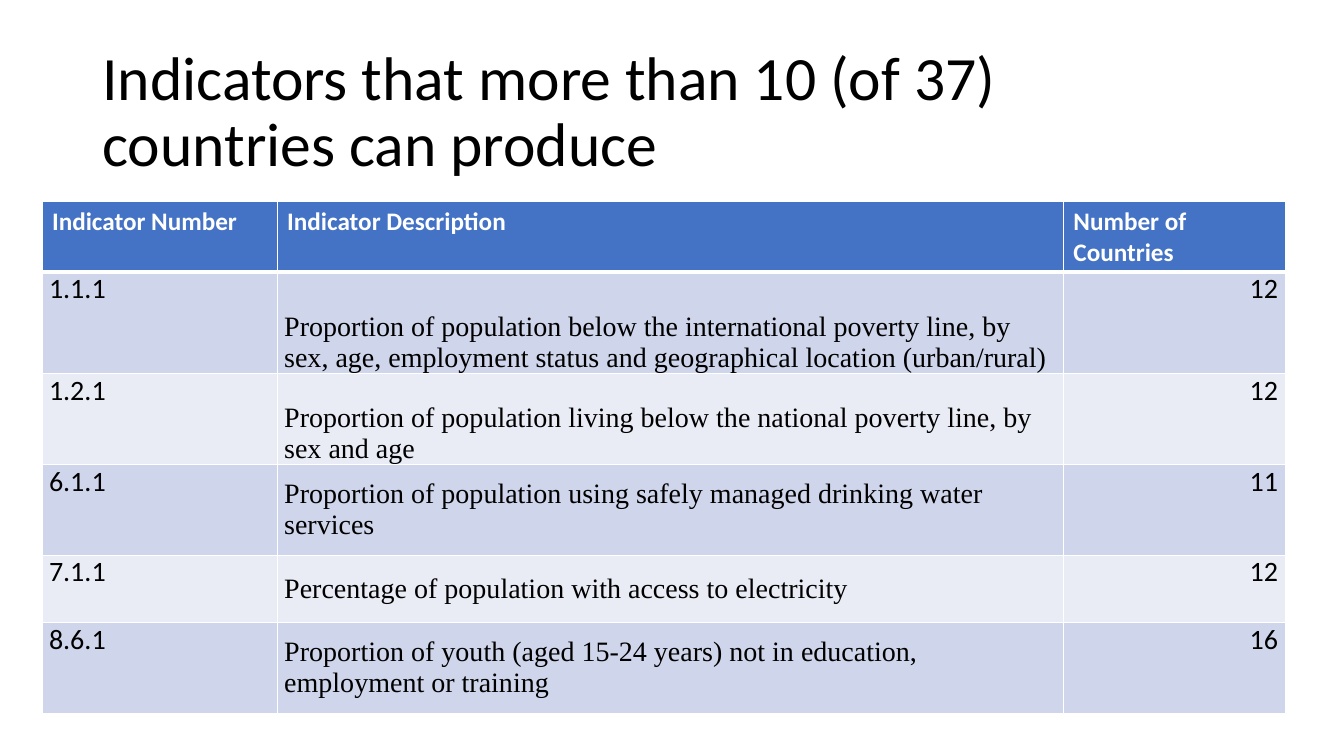
"""Slide listing the indicators that more than 10 countries can produce."""
from dataclasses import dataclass

from lxml import etree
from pptx import Presentation
from pptx import util as u
from pptx.dml.color import RGBColor
from pptx.enum import text
from pptx.oxml.ns import qn

COLUMNS, ROWS = 160, 90
CELL = u.Inches(1 / 12)


@dataclass(frozen=True)
class Theme:
    """Colours, fonts and type sizes of the slide."""
    sans: str = "Calibri"
    serif: str = "Times New Roman"
    ink: str = "000000"
    paper: str = "FFFFFF"
    header: str = "4472C4"
    bands: tuple = ("CFD5EA", "E9EBF5")
    title_size: int = 44
    header_size: int = 18
    body_size: int = 20
    rule: int = 1
    header_rule: int = 3


THEME = Theme()
TOP, MIDDLE, BOTTOM = (text.MSO_ANCHOR.TOP, text.MSO_ANCHOR.MIDDLE,
                       text.MSO_ANCHOR.BOTTOM)

TITLE = "Indicators that more than 10 (of 37) countries can produce"
HEADINGS = ("Indicator Number", "Indicator Description", "Number of Countries")
WIDTHS = (28, 93.6, 26.4)
HEADING_HEIGHT = 8
INDICATORS = (
    ("1.1.1", "Proportion of population below the international poverty line, "
     "by sex, age, employment status and geographical location (urban/rural)",
     "12", 12.1, BOTTOM),
    ("1.2.1", "Proportion of population living below the national poverty "
     "line, by sex and age", "12", 10.8, BOTTOM),
    ("6.1.1", "Proportion of population using safely managed drinking water "
     "services", "11", 10.8, MIDDLE),
    ("7.1.1", "Percentage of population with access to electricity",
     "12", 8, MIDDLE),
    ("8.6.1", "Proportion of youth (aged 15-24 years) not in education, "
     "employment or training", "16", 10.8, MIDDLE),
)


def grid(count):
    """Turn a count of grid cells into a length."""
    return u.Emu(round(count * CELL))


def write(paragraph, words, size, color, font=THEME.sans, bold=False):
    """Add one formatted run to a paragraph."""
    run = paragraph.add_run()
    run.text = words
    run.font.name = font
    run.font.size = u.Pt(size)
    run.font.bold = bold
    run.font.color.rgb = RGBColor.from_string(color)


def add_title(slide, words, left, top, width, height):
    """Add the title, centred vertically in its box."""
    frame = slide.shapes.add_textbox(
        *map(grid, (left, top, width, height))).text_frame
    frame.word_wrap = True
    frame.vertical_anchor = MIDDLE
    frame.paragraphs[0].line_spacing = 0.9
    write(frame.paragraphs[0], words, THEME.title_size, THEME.ink)


def paint(cell, fill, top=THEME.rule, bottom=THEME.rule):
    """Fill a cell and rule its four sides."""
    cell.fill.solid()
    cell.fill.fore_color.rgb = RGBColor.from_string(fill)
    properties = cell._tc.get_or_add_tcPr()
    sides = (("L", THEME.rule), ("R", THEME.rule), ("T", top), ("B", bottom))
    for place, (side, weight) in enumerate(sides):
        line = etree.Element(qn(f"a:ln{side}"), w=str(u.Pt(weight)))
        solid = etree.SubElement(line, qn("a:solidFill"))
        etree.SubElement(solid, qn("a:srgbClr"), val=THEME.paper)
        properties.insert(place, line)


def fill_heading(cell, words):
    """Write one column heading."""
    paint(cell, THEME.header, bottom=THEME.header_rule)
    write(cell.text_frame.paragraphs[0], words, THEME.header_size,
          THEME.paper, bold=True)


def fill_value(cell, words, fill, top, font=THEME.sans, anchor=TOP,
               align=text.PP_ALIGN.LEFT):
    """Write one value of an indicator."""
    paint(cell, fill, top=top)
    cell.margin_left = cell.margin_right = u.Inches(0.07)
    cell.margin_top = cell.margin_bottom = 0
    cell.vertical_anchor = anchor
    paragraph = cell.text_frame.paragraphs[0]
    paragraph.alignment = align
    write(paragraph, words, THEME.body_size, THEME.ink, font)


def add_indicators(slide, left, top):
    """Add the table of indicators."""
    heights = (HEADING_HEIGHT, *(height for *_, height, _ in INDICATORS))
    table = slide.shapes.add_table(
        len(heights), len(WIDTHS), grid(left), grid(top),
        grid(sum(WIDTHS)), grid(sum(heights))).table
    for column, width in zip(table.columns, WIDTHS):
        column.width = grid(width)
    for row, height in zip(table.rows, heights):
        row.height = grid(height)
    for column, heading in enumerate(HEADINGS):
        fill_heading(table.cell(0, column), heading)
    for row, (number, description, countries, _, anchor) in enumerate(
            INDICATORS, 1):
        band = THEME.bands[(row - 1) % 2]
        rule = THEME.header_rule if row == 1 else THEME.rule
        fill_value(table.cell(row, 0), number, band, rule)
        fill_value(table.cell(row, 1), description, band, rule,
                   THEME.serif, anchor)
        fill_value(table.cell(row, 2), countries, band, rule,
                   align=text.PP_ALIGN.RIGHT)


def main():
    """Build and save the slide."""
    deck = Presentation()
    deck.slide_width, deck.slide_height = grid(COLUMNS), grid(ROWS)
    slide = deck.slides.add_slide(deck.slide_layouts[6])
    add_title(slide, TITLE, left=11, top=4.8, width=138, height=17.4)
    add_indicators(slide, left=5, top=24)
    deck.save("out.pptx")


if __name__ == "__main__":
    main()
